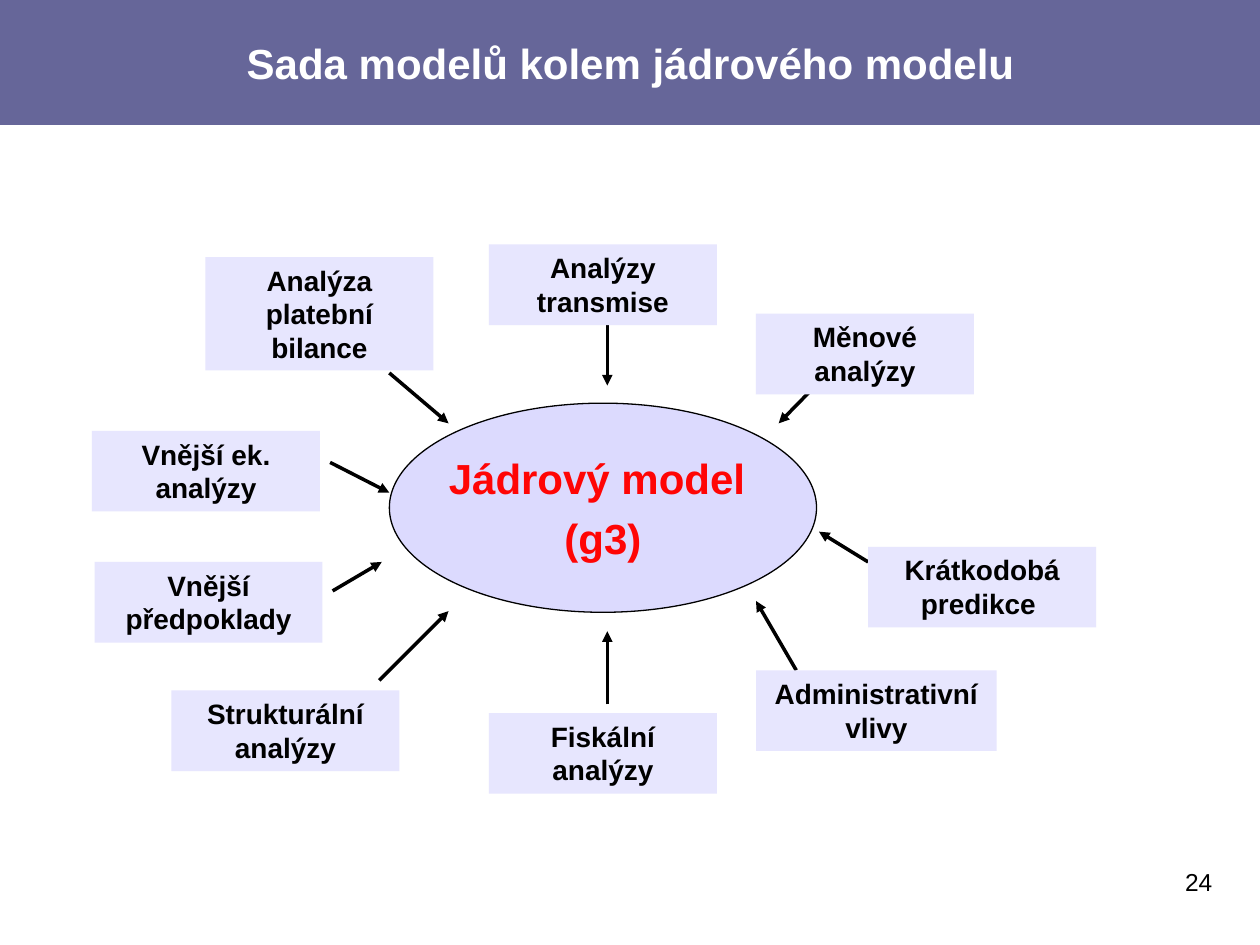
from lxml import etree
from pptx import Presentation
from pptx.dml.color import RGBColor
from pptx.enum.shapes import MSO_CONNECTOR, MSO_SHAPE
from pptx.enum.text import MSO_ANCHOR, MSO_AUTO_SIZE, PP_ALIGN
from pptx.oxml.ns import qn
from pptx.util import Inches, Pt

RECTANGLE, OVAL = MSO_SHAPE.RECTANGLE, MSO_SHAPE.OVAL
STRAIGHT = MSO_CONNECTOR.STRAIGHT
CENTER, RIGHT = PP_ALIGN.CENTER, PP_ALIGN.RIGHT
TOP, MIDDLE = MSO_ANCHOR.TOP, MSO_ANCHOR.MIDDLE
GROW = MSO_AUTO_SIZE.SHAPE_TO_FIT_TEXT
TITLE_ONLY = 5

FONT = "Arial"
COLORS = {"band": "666699", "title": "FFFFFF", "core": "DCDAFE",
          "core text": "FF0505", "box": "E7E6FE", "black": "000000"}

TITLE = "Sada modelů kolem jádrového modelu"
CORE_LINES = ["Jádrový model ", "(g3)"]
PAGE_NUMBER = "24"
BOX_WIDTH, BOX_HEIGHT = 1.81, 0.64

# Surrounding analyses: paragraphs, left, top, size, arrow start, arrow end
ANALYSES = [
    (["Analýzy transmise"], 3.88, 1.94, BOX_WIDTH, BOX_HEIGHT, (4.82, 2.57), (4.82, 3.06)),
    (["Měnové analýzy"], 6, 2.49, 1.73, BOX_HEIGHT, (6.65, 2.88), (6.18, 3.36)),
    (["Krátkodobá", "predikce "], 6.89, 4.34, BOX_WIDTH, BOX_HEIGHT, (6.89, 4.46), (6.5, 4.22)),
    (["Administrativní vlivy"], 6, 5.32, 1.91, BOX_HEIGHT, (6.32, 5.32), (6, 4.77)),
    (["Fiskální analýzy"], 3.88, 5.66, BOX_WIDTH, BOX_HEIGHT, (4.82, 5.59), (4.82, 5.01)),
    (["Strukturální analýzy"], 1.36, 5.48, BOX_WIDTH, BOX_HEIGHT, (3.01, 5.4), (3.56, 4.85)),
    (["Vnější předpoklady"], 0.75, 4.46, BOX_WIDTH, BOX_HEIGHT, (2.64, 4.69), (3.03, 4.46)),
    (["Vnější ek. analýzy"], 0.73, 3.42, BOX_WIDTH, BOX_HEIGHT, (2.62, 3.67), (3.09, 3.91)),
    (["Analýza platební bilance"], 1.63, 2.04, BOX_WIDTH, 0.9, (3.09, 2.96), (3.56, 3.36)),
]


def color(name):
    return RGBColor.from_string(COLORS[name])


def write(shape, lines, size, color_name, bold=True, align=CENTER,
          anchor=TOP, wrap=True, space_before=0):
    frame = shape.text_frame
    frame.word_wrap = wrap
    frame.vertical_anchor = anchor
    for index, line in enumerate(lines):
        paragraph = frame.add_paragraph() if index else frame.paragraphs[0]
        paragraph.alignment = align
        paragraph.space_before = Pt(space_before)
        run = paragraph.add_run()
        run.text = line
        run.font.name, run.font.size, run.font.bold = FONT, Pt(size), bold
        run.font.color.rgb = color(color_name)


def add_filled(slide, kind, left, top, width, height, fill, line=None):
    shape = slide.shapes.add_shape(
        kind, Inches(left), Inches(top), Inches(width), Inches(height))
    shape.shadow.inherit = False
    shape.fill.solid()
    shape.fill.fore_color.rgb = color(fill)
    if line:
        shape.line.color.rgb = color(line)
        shape.line.width = Pt(0.75)
    else:
        shape.line.fill.background()
    return shape


def add_arrow(slide, start, end):
    points = [Inches(value) for value in (*start, *end)]
    arrow = slide.shapes.add_connector(STRAIGHT, *points)
    arrow.line.color.rgb = color("black")
    arrow.line.width = Pt(2)
    etree.SubElement(arrow.line._get_or_add_ln(), qn("a:tailEnd"), type="triangle")
    etree.SubElement(arrow._element.spPr, qn("a:effectLst"))


def main():
    presentation = Presentation()
    presentation.slide_width, presentation.slide_height = Inches(10), Inches(7.5)
    slide = presentation.slides.add_slide(presentation.slide_layouts[TITLE_ONLY])

    # Title over its band
    title = slide.shapes.title
    title.left, title.top = Inches(0.2), Inches(0)
    title.width, title.height = Inches(9.61), Inches(0.99)
    write(title, [TITLE], 24, "title", anchor=MIDDLE)
    band = add_filled(slide, RECTANGLE, 0, 0, 10, 0.99, "band", "band")
    title._element.addprevious(band._element)

    # Core model
    core = add_filled(slide, OVAL, 3.09, 3.2, 3.39, 1.66, "core", "black")
    write(core, CORE_LINES, 24, "core text", anchor=MIDDLE, wrap=False, space_before=6)

    # Analyses pointing at the core
    for lines, left, top, width, height, start, end in ANALYSES:
        add_arrow(slide, start, end)
        box = add_filled(slide, RECTANGLE, left, top, width, height, "box")
        write(box, lines, 16, "black")
        box.text_frame.auto_size = GROW

    # Page number
    number = slide.shapes.add_textbox(Inches(7.17), Inches(6.83), Inches(2.55), Inches(0.52))
    write(number, [PAGE_NUMBER], 14, "black", bold=False, align=RIGHT)

    presentation.save("out.pptx")


if __name__ == "__main__":
    main()
